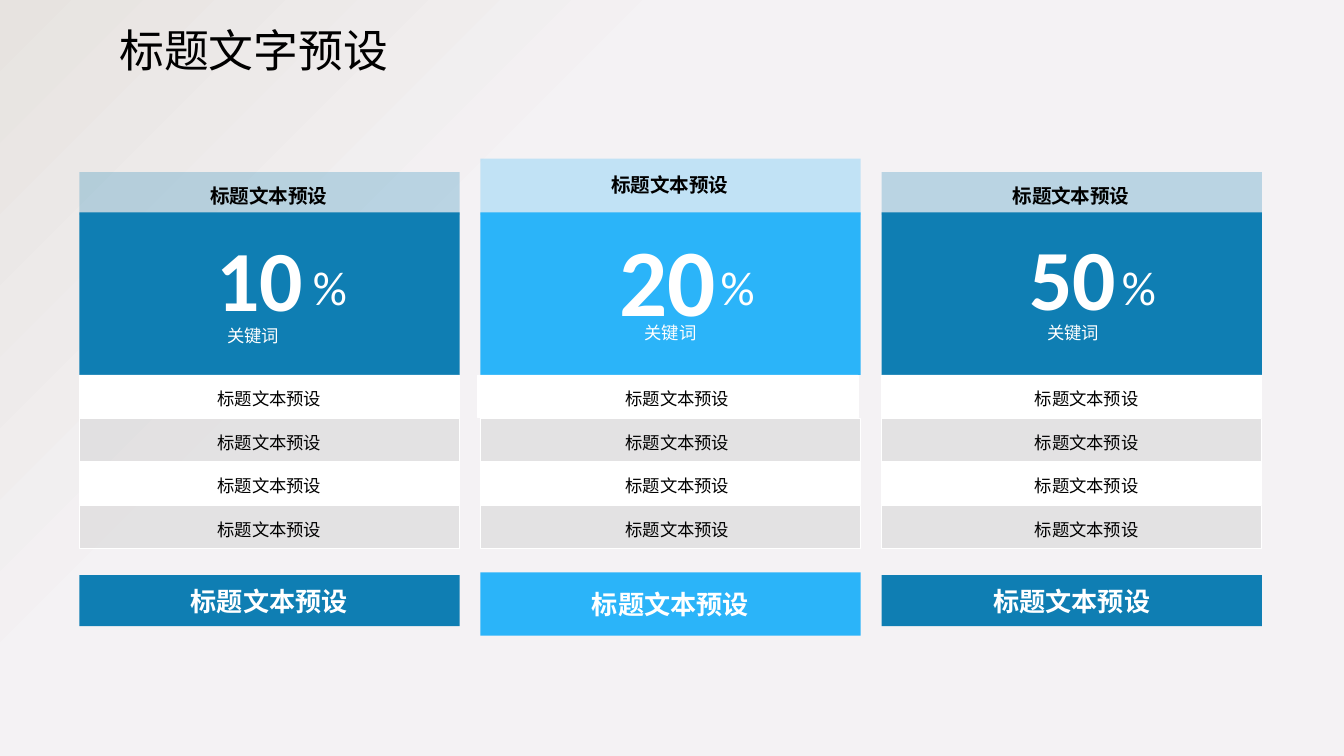
import pptx
import pptx.dml.color
import pptx.enum.shapes
import pptx.enum.text
import pptx.oxml
import pptx.oxml.ns
import pptx.util
from dataclasses import dataclass

Inches = pptx.util.Inches
Pt = pptx.util.Pt
ALIGN = pptx.enum.text.PP_ALIGN
ANCHOR = pptx.enum.text.MSO_ANCHOR

LABEL = "标题文本预设"
WHITE, BLACK, GREY = "FFFFFF", "000000", "BFBFBF"
SLIDE_WIDTH = 10
SLIDE_HEIGHT = SLIDE_WIDTH * 9 / 16
CARD_WIDTH, ROW_HEIGHT = 2.83, 0.32
ROW_PITCH = 0.97 / 3


@dataclass
class Plan:
    number: str
    color: str
    header_height: float
    header_text_top: float
    number_box: tuple
    number_size: float
    percent_left: float
    keyword_at: tuple
    row_text_left: float
    footer_top: float
    footer_height: float
    first_row_shift: float = 0


PLANS = [
    Plan("10", "0F7EB3", 0.32, 0.15, (0.95, 0.46, 0.78, 0.76), 45.9,
         1.65, (1.03, 1.2), 0.96, 3.1, 0.38),
    Plan("20", "2BB4F9", 0.42, 0.07, (0.97, 0.43, 0.85, 0.83), 51,
         1.7, (1.15, 1.18), 1.01, 3.08, 0.47, -0.02),
    Plan("50", "0F7EB3", 0.32, 0.15, (1.03, 0.45, 0.78, 0.76), 45.9,
         1.7, (1.16, 1.18), 1.07, 3.1, 0.38),
]


def rgb(value):
    return pptx.dml.color.RGBColor.from_string(value)


def write(shape, text, size, color, bold=False, font="Calibri",
          align=ALIGN.CENTER, anchor=ANCHOR.TOP, side=0, wrap=False):
    frame = shape.text_frame
    frame.text = text
    frame.word_wrap = wrap
    frame.vertical_anchor = anchor
    frame.margin_top = frame.margin_bottom = Inches(0.04)
    frame.margin_left = frame.margin_right = Inches(side)
    paragraph = frame.paragraphs[0]
    paragraph.alignment = align
    style = paragraph.runs[0].font
    style.size, style.bold, style.name = Pt(size), bold, font
    style.color.rgb = rgb(color)


def add_label(shapes, left, top, width, height, text, size, color, **style):
    label = shapes.add_textbox(*map(Inches, (left, top, width, height)))
    write(label, text, size, color, **style)


def add_panel(shapes, left, top, width, height, color, alpha=None, outline=None):
    panel = shapes.add_shape(pptx.enum.shapes.MSO_SHAPE.RECTANGLE,
                             *map(Inches, (left, top, width, height)))
    panel.shadow.inherit = False
    panel.fill.solid()
    panel.fill.fore_color.rgb = rgb(color)
    if alpha is not None:
        tint = panel.fill._xPr.find(".//" + pptx.oxml.ns.qn("a:srgbClr"))
        tint.append(pptx.oxml.parse_xml(
            f'<a:alpha {pptx.oxml.ns.nsdecls("a")} val="{alpha * 1000}"/>'))
    if outline:
        panel.line.color.rgb = rgb(outline)
        panel.line.width = Pt(0.5)
    else:
        panel.line.fill.background()
    return panel


def add_backdrop(shapes, width, height):
    backdrop = add_panel(shapes, 0, 0, width, height, "F4F2F4")
    properties = backdrop.fill._xPr
    solid = properties.find(pptx.oxml.ns.qn("a:solidFill"))
    properties.replace(solid, pptx.oxml.parse_xml(
        f'<a:gradFill {pptx.oxml.ns.nsdecls("a")} rotWithShape="1"><a:gsLst>'
        '<a:gs pos="66000"><a:srgbClr val="F4F2F4"/></a:gs>'
        '<a:gs pos="100000"><a:srgbClr val="E7E3E0"/></a:gs></a:gsLst>'
        '<a:path path="circle"><a:fillToRect l="100000" t="100000"/></a:path>'
        '</a:gradFill>'))


def add_figure(shapes, left, top, plan):
    x, y, width, height = plan.number_box
    add_label(shapes, left + x, top + y, width, height,
              plan.number, plan.number_size, WHITE, bold=True)
    add_label(shapes, left + plan.percent_left, top + 0.7, 0.43, 0.45,
              "%", 25.5, WHITE)
    x, y = plan.keyword_at
    add_label(shapes, left + x, top + y, 0.53, 0.23, "关键词", 9.3, WHITE)


def add_rows(shapes, left, top, plan):
    for index in range(4):
        row_top = top + index * ROW_PITCH
        shift = 0 if index else plan.first_row_shift
        color, alpha = (GREY, 30) if index % 2 else (WHITE, None)
        add_panel(shapes, left + shift, row_top, CARD_WIDTH, ROW_HEIGHT,
                  color, alpha, WHITE)
        add_label(shapes, left + plan.row_text_left, row_top + 0.06, 0.91, 0.23,
                  LABEL, 9.3, BLACK)


def add_card(slide, left, top, plan):
    shapes = slide.shapes.add_group_shape().shapes
    add_panel(shapes, left, top + 0.4, CARD_WIDTH, 1.21, plan.color)
    add_rows(shapes, left, top + 1.61, plan)
    add_panel(shapes, left, top + 0.42 - plan.header_height,
              CARD_WIDTH, plan.header_height, plan.color, 25)
    add_label(shapes, left + 0.91, top + plan.header_text_top, 1, 0.25,
              LABEL, 10.5, BLACK, bold=True)
    add_figure(shapes, left, top, plan)
    footer = add_panel(shapes, left, top + plan.footer_top,
                       CARD_WIDTH, plan.footer_height, plan.color)
    write(footer, LABEL, 14, WHITE, bold=True, anchor=ANCHOR.MIDDLE)


def main():
    deck = pptx.Presentation()
    deck.slide_width, deck.slide_height = Inches(SLIDE_WIDTH), Inches(SLIDE_HEIGHT)
    slide = deck.slides.add_slide(deck.slide_layouts[6])
    add_backdrop(slide.shapes, SLIDE_WIDTH, SLIDE_HEIGHT)
    first_left, last_left = 0.59, 6.56
    pitch = (last_left - first_left) / (len(PLANS) - 1)
    for index, plan in enumerate(PLANS):
        add_card(slide, first_left + index * pitch, 1.18, plan)
    add_label(slide.shapes, 0.79, 0.13, 2.34, 0.5, "标题文字预设", 24, BLACK,
              font="Noto Sans CJK SC", align=ALIGN.LEFT, side=0.1, wrap=True)
    deck.save("out.pptx")


if __name__ == "__main__":
    main()
